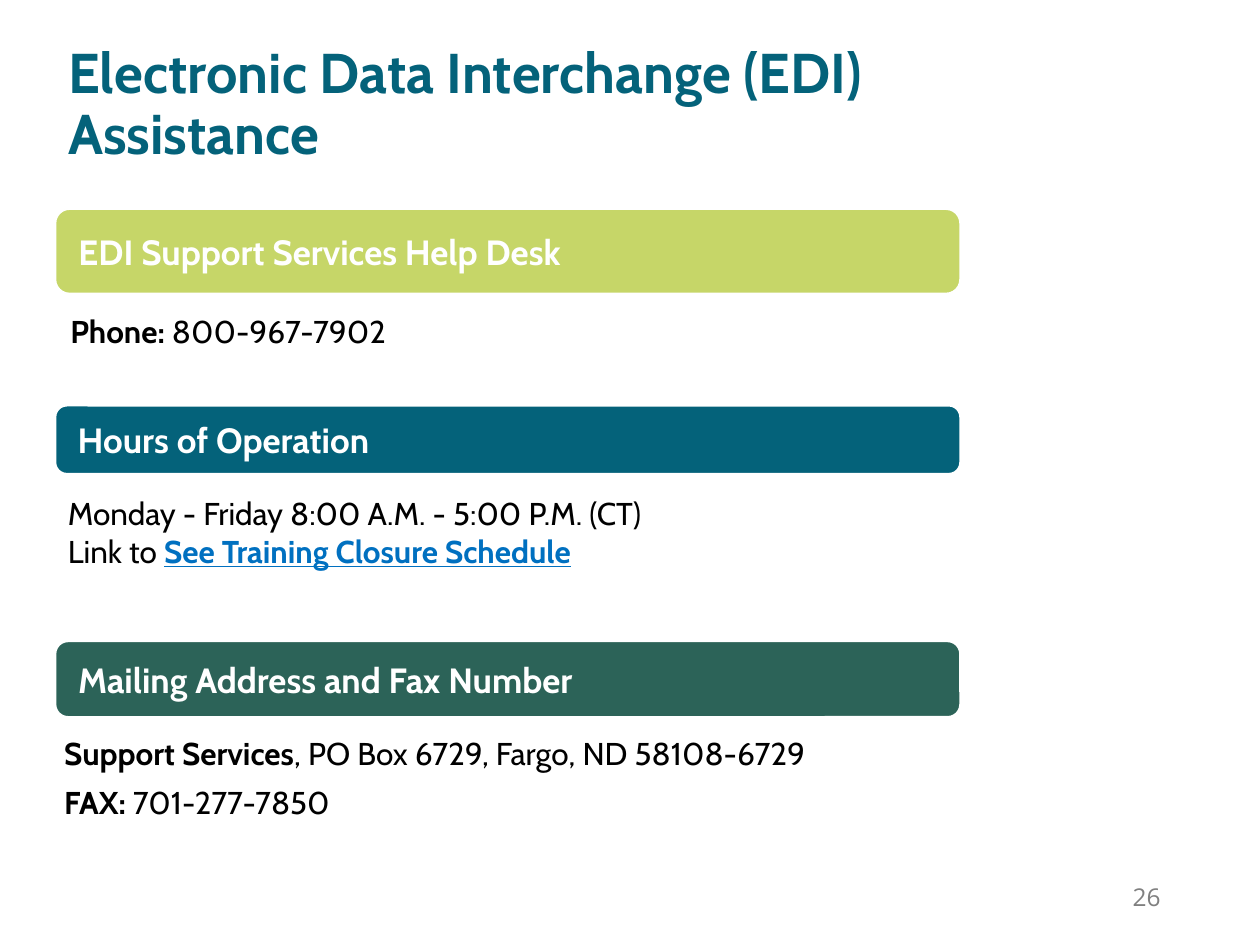
from pptx import Presentation
from pptx.dml.color import RGBColor
from pptx.enum.shapes import MSO_SHAPE as Shape
from pptx.enum.text import MSO_ANCHOR as Anchor, PP_ALIGN as Align
from pptx.util import Inches, Pt

COLORS = {
    "teal": "04627A", "lime": "C6D668", "green": "2C6358", "link": "0070C0",
    "black": "000000", "white": "FFFFFF", "gray": "808080",
}
BOLD = {"bold": True}
LINK = {"bold": True, "underline": True, "color": "link"}
BANNER_LEFT, BANNER_WIDTH = 0.44, 7.18


def rgb(name):
    return RGBColor.from_string(COLORS[name])


class SlideBuilder:
    """Holds the text style and the current slide."""

    body_style = {"name": "Cabin", "size": Pt(18), "bold": False, "color": "black"}

    def __init__(self, slide):
        self.slide = slide

    def add_runs(self, paragraph, runs, **style):
        """Add (text, format) runs; a newline in the text is a line break."""
        for text, run_format in runs:
            for number, line in enumerate(text.split("\n")):
                if number:
                    paragraph.add_line_break()
                run = paragraph.add_run()
                run.text = line
                for key, value in {**self.body_style, **style, **run_format}.items():
                    if key == "color":
                        run.font.color.rgb = rgb(value)
                    else:
                        setattr(run.font, key, value)

    def place(self, shape, box):
        for side, length in zip(("left", "top", "width", "height"), box):
            setattr(shape, side, Inches(length))

    def title(self, box, text):
        heading = self.slide.shapes.title
        self.place(heading, box)
        heading.text_frame.vertical_anchor = Anchor.MIDDLE
        paragraph = heading.text_frame.paragraphs[0]
        paragraph.alignment = Align.LEFT
        paragraph.line_spacing = 0.9
        self.add_runs(paragraph, [(text, BOLD)], size=Pt(32), color="teal")

    def banner(self, top, height, text, color):
        bar = self.slide.shapes.add_shape(
            Shape.ROUNDED_RECTANGLE,
            *map(Inches, (BANNER_LEFT, top, BANNER_WIDTH, height)))
        bar.shadow.inherit = False
        bar.fill.solid()
        bar.fill.fore_color.rgb = rgb(color)
        bar.line.color.rgb = rgb("white")
        bar.line.width = Pt(1)
        frame = bar.text_frame
        frame.margin_left = Inches(0.15)
        frame.vertical_anchor = Anchor.MIDDLE
        frame.paragraphs[0].alignment = Align.LEFT
        self.add_runs(frame.paragraphs[0], [(text, BOLD)], size=Pt(20), color="white")

    def text(self, box, paragraphs, align=Align.LEFT, anchor=Anchor.TOP,
             inset=None, **style):
        frame = self.slide.shapes.add_textbox(*map(Inches, box)).text_frame
        frame.word_wrap = True
        frame.vertical_anchor = anchor
        if inset is not None:
            for side in ("left", "top", "right", "bottom"):
                setattr(frame, f"margin_{side}", Inches(inset))
        for number, runs in enumerate(paragraphs):
            paragraph = frame.add_paragraph() if number else frame.paragraphs[0]
            paragraph.alignment = align
            paragraph.space_after = Pt(6)
            self.add_runs(paragraph, runs, **style)


def main():
    deck = Presentation()
    deck.slide_width, deck.slide_height = Inches(10), Inches(7.5)
    page = SlideBuilder(deck.slides.add_slide(deck.slide_layouts[5]))

    page.title((0.44, 0.17, 8.62, 1.34),
               "Electronic Data Interchange (EDI)\nAssistance")

    page.banner(1.66, 0.67, "EDI Support Services Help Desk", "lime")
    page.text((0.46, 2.43, 7.18, 0.4),
              [[("Phone: ", BOLD), ("800-967-7902", {})]])

    page.banner(3.22, 0.54, "Hours of Operation", "teal")
    page.text((0.44, 3.87, 7.39, 0.71),
              [[("Monday - Friday 8:00 A.M. - 5:00 P.M. (CT)\nLink to ", {}),
                ("See Training Closure Schedule", LINK)]])

    page.banner(5.09, 0.6, "Mailing Address and Fax Number", "green")
    page.text((0.51, 5.59, 7.39, 1.16),
              [[("Support Services", BOLD),
                (", PO Box 6729, Fargo, ND 58108-6729", {})],
               [("FAX: ", BOLD), ("701-277-7850", {})]],
              anchor=Anchor.MIDDLE, inset=0)

    page.text((7.06, 6.95, 2.25, 0.4), [[("26", {})]], align=Align.RIGHT,
              name="Open Sans", size=Pt(14), color="gray")

    deck.save("out.pptx")


if __name__ == "__main__":
    main()
